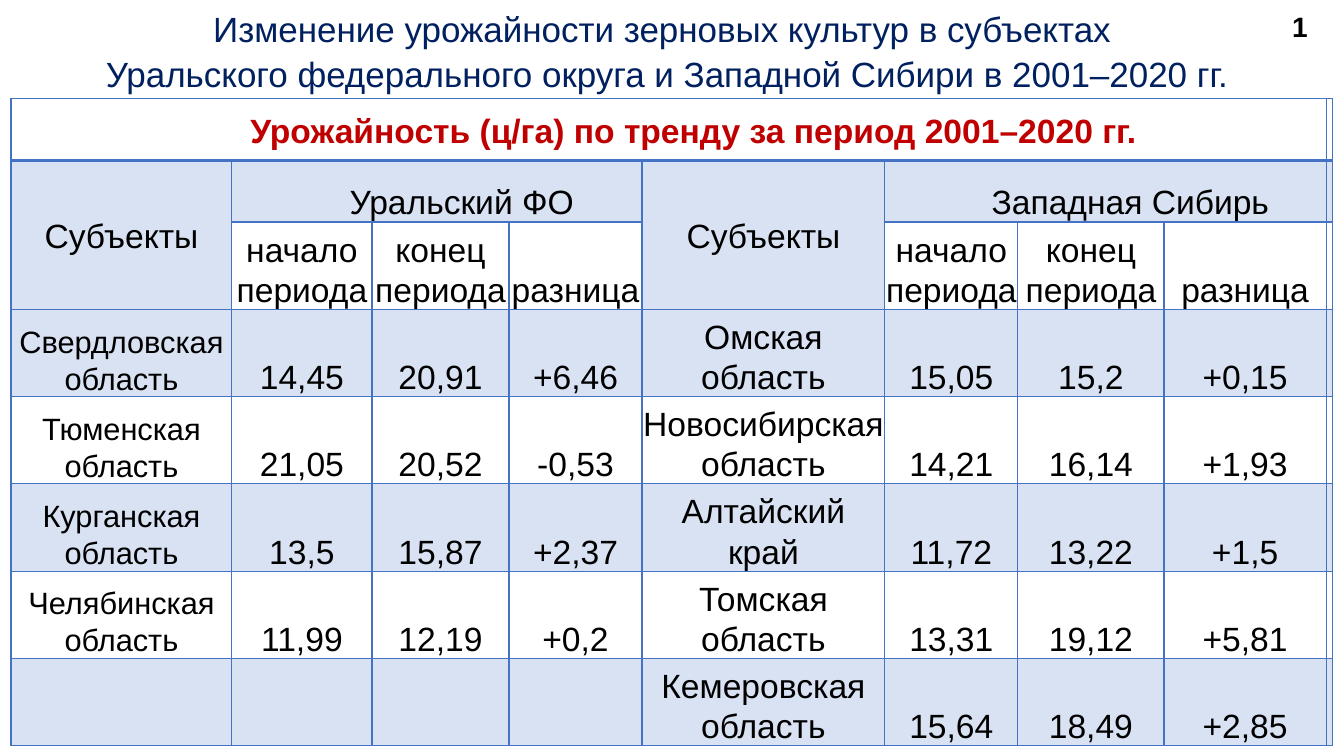
from lxml.etree import SubElement
from pptx import Presentation
from pptx.dml.color import RGBColor
from pptx.enum.text import MSO_ANCHOR as Anchor, MSO_AUTO_SIZE as AutoSize, PP_ALIGN as Align
from pptx.oxml import parse_xml
from pptx.oxml.ns import nsdecls, qn
from pptx.util import Pt

FONT = "Arial"
NAVY, RED, BLACK, BLUE = "002060", "C00000", "000000", "4472C4"
LINE_SPACING = 1.07
HEADING_INDENT = 35.4

TITLE = [
    "Изменение урожайности зерновых культур в субъектах ",
    "Уральского федерального округа и Западной Сибири в 2001–2020 гг.",
]
TABLE_HEADING = "Урожайность (ц/га) по тренду за период 2001–2020 гг."
PERIODS = ["начало периода", "конец периода", "разница"]
URAL = [
    ["Свердловская область", "14,45", "20,91", "+6,46"],
    ["Тюменская область", "21,05", "20,52", "-0,53"],
    ["Курганская область", "13,5", "15,87", "+2,37"],
    ["Челябинская область", "11,99", "12,19", "+0,2"],
    [""] * 4,
]
SIBERIA = [
    ["Омская область", "15,05", "15,2", "+0,15"],
    ["Новосибирская область", "14,21", "16,14", "+1,93"],
    ["Алтайский край", "11,72", "13,22", "+1,5"],
    ["Томская область", "13,31", "19,12", "+5,81"],
    ["Кемеровская область", "15,64", "18,49", "+2,85"],
]
# Each region: name, first column, rows, text size of its subjects
REGIONS = [("Уральский ФО", 0, URAL, 22), ("Западная Сибирь", 4, SIBERIA, 24)]
COLUMN_WIDTHS = [157.7, 100.1, 97.9, 95, 173.5, 95, 104.4, 115.9, 3.6]
ROW_HEIGHTS = [44, 44] + [62.2] * 6


def rgb(value):
    return RGBColor.from_string(value)


def add_run(paragraph, text, size, color, bold=False):
    run = paragraph.add_run()
    run.text = text
    run.font.name = FONT
    run.font.size = Pt(size)
    run.font.bold = bold
    run.font.color.rgb = rgb(color)


def add_text(slide, box, lines, size, color, bold=False, align=None, spacing=None):
    frame = slide.shapes.add_textbox(*map(Pt, box)).text_frame
    frame.word_wrap = True
    frame.auto_size = AutoSize.SHAPE_TO_FIT_TEXT
    for index, line in enumerate(lines):
        paragraph = frame.add_paragraph() if index else frame.paragraphs[0]
        paragraph.alignment = align
        paragraph.line_spacing = spacing
        add_run(paragraph, line, size, color, bold)


def write_cell(cell, text, size=24, color=BLACK, bold=False, anchor=Anchor.BOTTOM, indent=0):
    cell.vertical_anchor = anchor
    paragraph = cell.text_frame.paragraphs[0]
    paragraph.alignment = Align.CENTER
    paragraph.line_spacing = LINE_SPACING
    if indent:
        paragraph._p.get_or_add_pPr().set("indent", str(Pt(indent)))
    add_run(paragraph, text, size, color, bold)


def style_cell(cell, shaded, top, bottom):
    """Set the insets, tint and borders; top and bottom are line widths."""
    cell.margin_left = cell.margin_right = cell.margin_top = Pt(0.7)
    cell.margin_bottom = 0
    if shaded:
        cell.fill.solid()
        cell.fill.fore_color.rgb = rgb(BLUE)
    else:
        cell.fill.background()
    properties = cell._tc.get_or_add_tcPr()
    for tint in properties.iter(qn("a:srgbClr")):
        SubElement(tint, qn("a:alpha")).set("val", "20000")
    for place, (side, width) in enumerate(zip("LRTB", (1, 1, top, bottom))):
        properties.insert(place, parse_xml(
            f'<a:ln{side} {nsdecls("a")} w="{Pt(width)}"><a:solidFill>'
            f'<a:srgbClr val="{BLUE}"/></a:solidFill></a:ln{side}>'))


def fill_region(table, name, first, subjects, subject_size):
    """Write one region's headings and rows into four columns."""
    table.cell(1, first).merge(table.cell(2, first))
    write_cell(table.cell(1, first), "Субъекты", anchor=Anchor.MIDDLE)
    table.cell(1, first + 1).merge(table.cell(1, first + 3))
    write_cell(table.cell(1, first + 1), name, indent=HEADING_INDENT)
    for offset, period in enumerate(PERIODS, 1):
        write_cell(table.cell(2, first + offset), period)
    for row, values in enumerate(subjects, 3):
        for offset, value in enumerate(values):
            if value:
                size = 24 if offset else subject_size
                write_cell(table.cell(row, first + offset), value, size)


def add_yield_table(slide, left, top):
    frame = slide.shapes.add_table(
        len(ROW_HEIGHTS), len(COLUMN_WIDTHS), Pt(left), Pt(top),
        Pt(sum(COLUMN_WIDTHS)), Pt(sum(ROW_HEIGHTS)))
    table = frame.table
    table.first_row = table.horz_banding = False
    for column, width in zip(table.columns, COLUMN_WIDTHS):
        column.width = Pt(width)
    for index, (row, height) in enumerate(zip(table.rows, ROW_HEIGHTS)):
        row.height = Pt(height)
        for cell in row.cells:
            style_cell(cell, index % 2 == 1,
                       top=2 if index == 1 else 1, bottom=2 if index == 0 else 1)
    table.cell(0, 0).merge(table.cell(0, 7))
    write_cell(table.cell(0, 0), TABLE_HEADING, color=RED, bold=True,
               anchor=Anchor.MIDDLE, indent=HEADING_INDENT)
    for region in REGIONS:
        fill_region(table, *region)


def main():
    deck = Presentation()
    deck.slide_width, deck.slide_height = Pt(960), Pt(540)
    slide = deck.slides.add_slide(deck.slide_layouts[6])
    add_text(slide, (7.9, 0, 936.7, 70.6), TITLE, 25, NAVY,
             align=Align.CENTER, spacing=LINE_SPACING)
    add_yield_table(slide, 7.9, 70.6)
    add_text(slide, (915.8, 3.6, 35.3, 31.7), ["1"], 20, BLACK, bold=True)
    deck.save("out.pptx")


if __name__ == "__main__":
    main()
